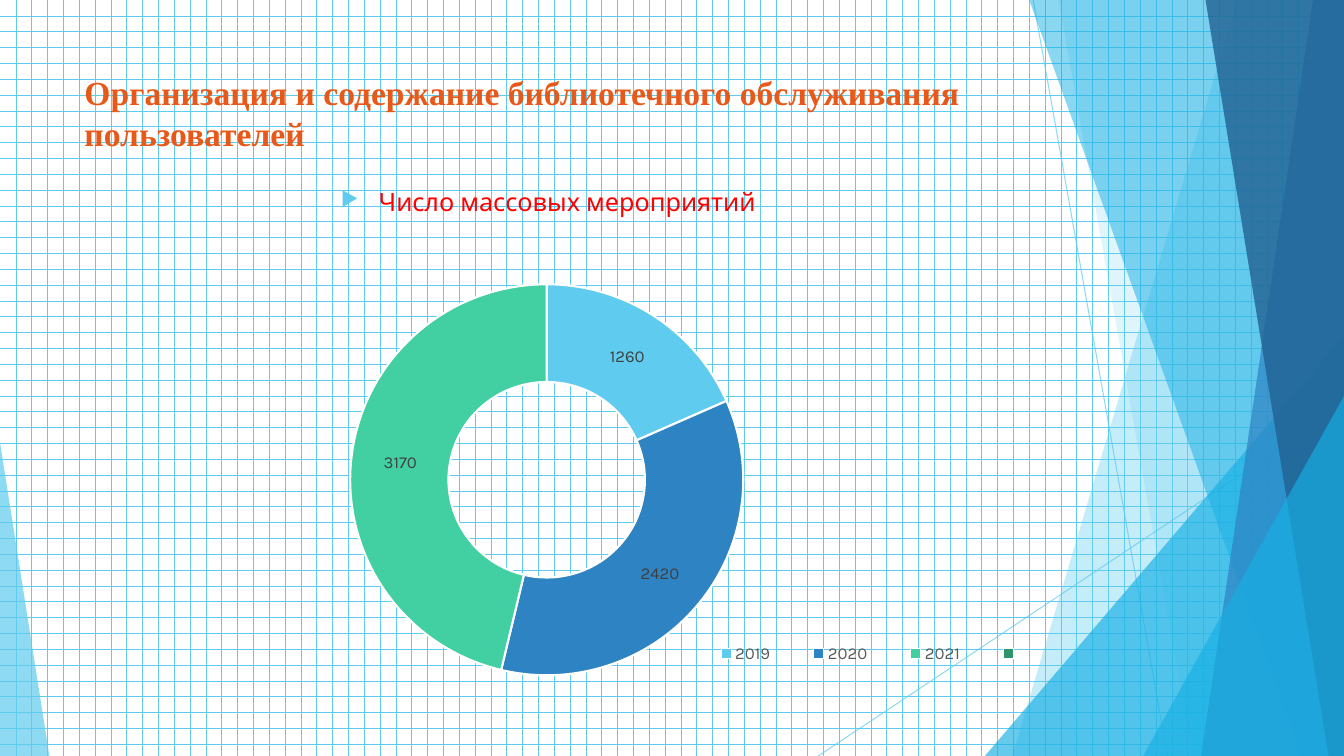
from lxml.etree import SubElement
from pptx import Presentation
from pptx.chart.data import CategoryChartData
from pptx.dml.color import RGBColor
from pptx.enum.chart import XL_CHART_TYPE as ChartType, XL_LEGEND_POSITION as LegendPlace
from pptx.enum.dml import MSO_PATTERN as Pattern
from pptx.enum.shapes import MSO_CONNECTOR as Connector, MSO_SHAPE as Shape
from pptx.enum.text import MSO_ANCHOR as Anchor, PP_ALIGN as Align
from pptx.oxml import parse_xml
from pptx.oxml.ns import nsdecls, qn
from pptx.util import Pt


def color(value):
    return RGBColor.from_string(value)


def paint(fill, value, opacity):
    fill.solid()
    fill.fore_color.rgb = color(value)
    tint = fill._xPr.find(qn("a:solidFill"))[0]
    SubElement(tint, qn("a:alpha"), val=str(opacity * 1000))


deck = Presentation()
deck.slide_width, deck.slide_height = Pt(960), Pt(540)
slide = deck.slides.add_slide(deck.slide_layouts[6])
shapes = slide.shapes

grid = slide.background.fill
grid.patterned()
grid.pattern = Pattern.DOTTED_GRID
grid.fore_color.rgb = color("5FCBEF")
grid.back_color.rgb = color("FFFFFF")

for ends in [(738, 0, 834, 540), (960, 290, 584.5, 540)]:
    ray = shapes.add_connector(Connector.STRAIGHT, *map(Pt, ends))
    ray.line.width = Pt(0.75)
    paint(ray.line.fill, "5FCBEF", 70)
    SubElement(ray._element.spPr, qn("a:effectLst"))

facets = [
    ("band", (884, 723), "5FCBEF", 36),
    ("band", (756, 852), "5FCBEF", 20),
    ("triangle", (703.5, 239.8, 256.5, 300.2, 1), "17B0E4", 66),
    ("band", (735, 929.5), "17B0E4", 50),
    ("band", (938, 858), "2E83C3", 70),
    ("band", (861, 949), "226292", 80),
    ("triangle", (816.5, 283, 143.5, 257, 1), "17B0E4", 66),
    ("triangle", (0, 316, 35.3, 224, 0), "5FCBEF", 70),
]
for kind, geometry, tint, opacity in facets:
    if kind == "band":
        top, bottom = geometry
        outline = shapes.build_freeform(Pt(top), Pt(-0.6), scale=1)
        corners = [(960, -0.6), (960, 540), (bottom, 540)]
        outline.add_line_segments([(Pt(x), Pt(y)) for x, y in corners], close=True)
        facet = outline.convert_to_shape()
    else:
        *frame, apex = geometry
        facet = shapes.add_shape(Shape.ISOSCELES_TRIANGLE, *map(Pt, frame))
        facet.adjustments[0] = apex
    paint(facet.fill, tint, opacity)
    facet.line.fill.background()
    facet.shadow.inherit = False

texts = [
    ("Организация и содержание библиотечного обслуживания пользователей",
     (53.3, 48, 676.8, 93.6), Align.LEFT, "E85818",
     {"name": "Times New Roman", "size": Pt(24), "bold": True}),
    ("Число массовых мероприятий",
     (53.3, 129.6, 676.8, 345.6), Align.CENTER, "FF0000",
     {"name": "Karla", "size": Pt(18)}),
]
for wording, frame, align, tint, style in texts:
    box = shapes.add_textbox(*map(Pt, frame))
    box.text_frame.word_wrap = True
    box.text_frame.vertical_anchor = Anchor.TOP
    para = box.text_frame.paragraphs[0]
    para.alignment = align
    span = para.add_run()
    span.text = wording
    span.font.color.rgb = color(tint)
    for key, value in style.items():
        setattr(span.font, key, value)

para.space_before = Pt(10)
bullet = para._p.get_or_add_pPr()
bullet.set("marL", str(Pt(27)))
bullet.set("indent", str(Pt(-27)))
bullet_color = SubElement(bullet, qn("a:buClr"))
SubElement(bullet_color, qn("a:srgbClr"), val="5FCBEF")
SubElement(bullet, qn("a:buSzPct"), val="80000")
SubElement(bullet, qn("a:buChar"), char="▶")

data = CategoryChartData()
data.categories = ["2019", "2020", "2021", ""]
data.add_series("Series 1", [1260, 2420, 3170, None])
frame = map(Pt, (98, 202.3, 672.5, 280.8))
chart = shapes.add_chart(ChartType.DOUGHNUT, *frame, data).chart
chart.has_title = False
chart.has_legend = True
chart.legend.position = LegendPlace.BOTTOM
chart.legend.include_in_layout = False

plot = chart.plots[0]
plot.vary_by_categories = True
plot._element.find(qn("c:holeSize")).set("val", "75")
series = plot.series[0]
for index, tint in enumerate(["5FCBEF", "2E83C3", "42D0A2", "2E946B"]):
    slice_format = series.points[index].format
    slice_format.fill.solid()
    slice_format.fill.fore_color.rgb = color(tint)
    slice_format.line.color.rgb = color("FFFFFF")
    slice_format.line.width = Pt(1.5)

labels = series.data_labels
labels.show_value = True
labels.show_percentage = False
for font, size, tint in [(chart.font, 10, "000000"),
                         (chart.legend.font, 12, "595959"),
                         (labels.font, 12, "404040")]:
    font.name = "Karla"
    font.size = Pt(size)
    font.color.rgb = color(tint)

layouts = [
    (chart._chartSpace.chart.plotArea, "inner", (0.14, 0, 0.59, 1)),
    (chart.legend._element, None, (0.58, 0.9, 0.4, 0.09)),
]
for owner, target, (x, y, width, height) in layouts:
    for old in owner.findall(qn("c:layout")):
        owner.remove(old)
    inner = f'<c:layoutTarget val="{target}"/>' if target else ""
    layout = parse_xml(
        f'<c:layout {nsdecls("c")}><c:manualLayout>{inner}'
        '<c:xMode val="edge"/><c:yMode val="edge"/>'
        f'<c:x val="{x}"/><c:y val="{y}"/><c:w val="{width}"/><c:h val="{height}"/>'
        '</c:manualLayout></c:layout>')
    owner.insert(1 if target is None else 0, layout)

deck.save("out.pptx")
